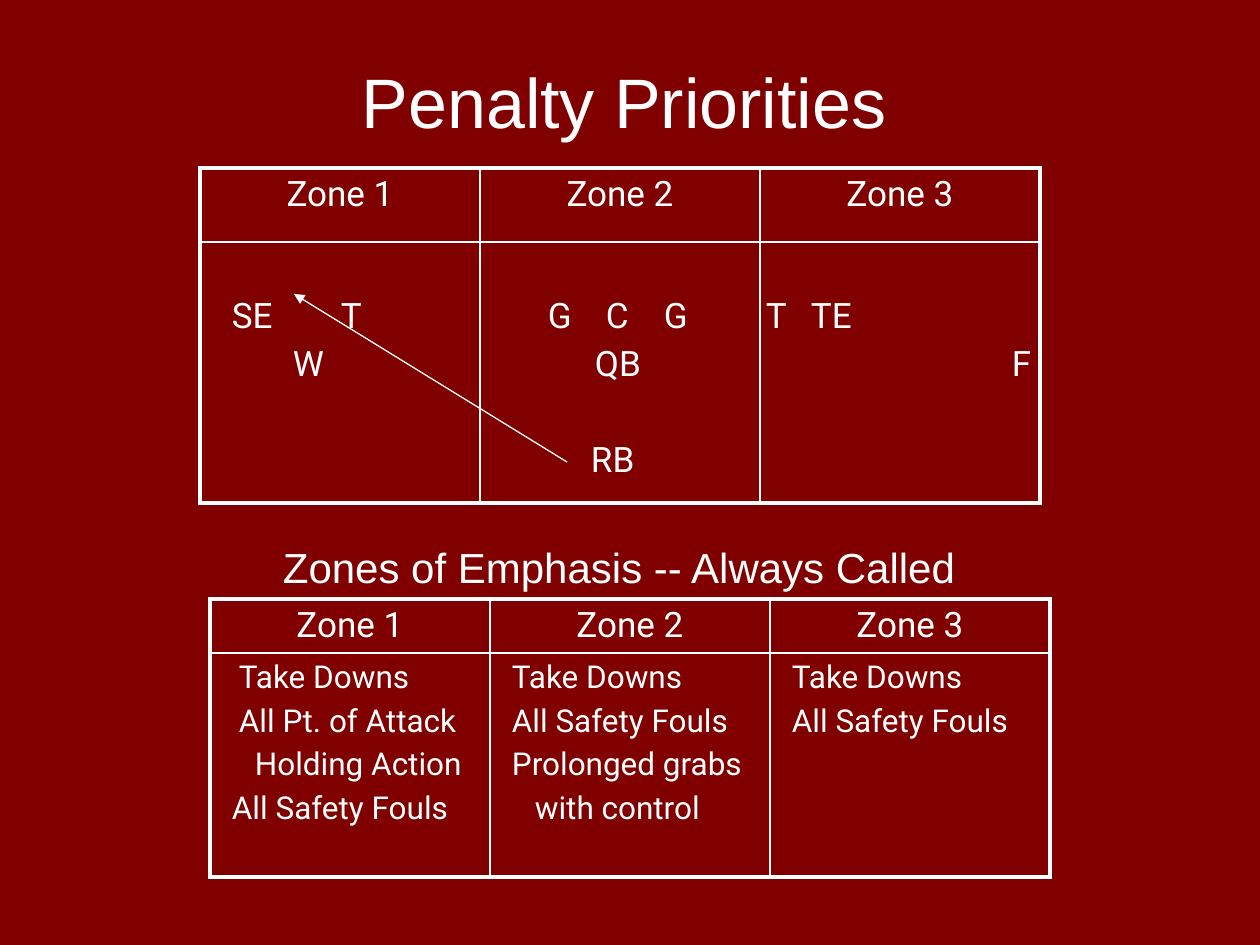
from pptx import Presentation
from pptx.dml.color import RGBColor
from pptx.enum.shapes import MSO_CONNECTOR
from pptx.enum.text import PP_ALIGN
from pptx.oxml.ns import qn
from pptx.util import Emu, Pt
from lxml import etree

CENTER, LEFT = PP_ALIGN.CENTER, PP_ALIGN.LEFT
STRAIGHT = MSO_CONNECTOR.STRAIGHT
MAROON = RGBColor(0x80, 0x00, 0x00)
WHITE = RGBColor(0xFF, 0xFF, 0xFF)
PX_PER_INCH = 126
INSET = 6
COLUMN_WIDTH = 280
LINE_GAP = 4
OUTER, INNER = 2.25, 1

# text, (left, top, width, height), size
HEADINGS = [
    ("Penalty Priorities", (73, 53, 1102, 89), 40),
    ("Zones of Emphasis -- Always Called", (73, 536, 1092, 60), 24),
]
ZONES = ["Zone 1", "Zone 2", "Zone 3"]
# Each line: space before in points, then (offset in px, text) items
FORMATION = [
    [(LINE_GAP, [(26, "SE"), (135, "T")]), (LINE_GAP, [(87, "W")])],
    [(LINE_GAP, [(62, "G"), (120, "C"), (178, "G")]),
     (LINE_GAP, [(109, "QB")]),
     (31.4, [(105, "RB")])],
    [(LINE_GAP, [(0, "T"), (45, "TE")]), (LINE_GAP, [(246, "F")])],
]
FOULS = [
    [(LINE_GAP, [(23, "Take Downs")]),
     (LINE_GAP, [(23, "All Pt. of Attack")]),
     (LINE_GAP, [(39, "Holding Action")]),
     (LINE_GAP, [(16, "All Safety Fouls")])],
    [(LINE_GAP, [(16, "Take Downs")]),
     (LINE_GAP, [(16, "All Safety Fouls")]),
     (LINE_GAP, [(16, "Prolonged grabs")]),
     (LINE_GAP, [(39, "with control")])],
    [(LINE_GAP, [(16, "Take Downs")]),
     (LINE_GAP, [(16, "All Safety Fouls")])],
]
# left, top, row heights, body, body size, body top margin
TABLES = [
    (200, 168, (74, 261), FORMATION, 20, 54),
    (210, 599, (53, 224), FOULS, 18, INSET),
]
RUN_START, RUN_END = (567, 462), (294, 294)


def px(length):
    return Emu(round(length * 914400 / PX_PER_INCH))


def set_font(para, name, size):
    para.font.name = name
    para.font.size = Pt(size)
    para.font.color.rgb = WHITE


def set_margins(target, top=INSET):
    target.margin_left = target.margin_right = target.margin_bottom = px(INSET)
    target.margin_top = px(top)


def add_heading(page, text, frame, size):
    box = page.shapes.add_textbox(*map(px, frame))
    box.text_frame.word_wrap = True
    set_margins(box.text_frame)
    para = box.text_frame.paragraphs[0]
    para.text = text
    para.alignment = CENTER
    set_font(para, "Arial", size)


def place_items(para, items):
    """Indent a single item; set several items at tab stops."""
    props = para._p.get_or_add_pPr()
    if len(items) == 1:
        offset, para.text = items[0]
        props.set("marL", str(px(offset)))
        props.set("indent", "0")
        return
    para.text = "".join(("\t" if offset else "") + text for offset, text in items)
    stops = etree.SubElement(props, qn("a:tabLst"))
    for offset, _ in items:
        if offset:
            etree.SubElement(stops, qn("a:tab"), pos=str(px(offset)), algn="l")


def set_borders(cell, row, column):
    widths = {
        "a:lnL": OUTER if column == 0 else INNER,
        "a:lnR": OUTER if column == len(ZONES) - 1 else INNER,
        "a:lnT": OUTER if row == 0 else INNER,
        "a:lnB": OUTER if row == 1 else INNER,
    }
    props = cell._tc.get_or_add_tcPr()
    for index, (tag, width) in enumerate(widths.items()):
        line = etree.Element(qn(tag), w=str(Pt(width)))
        fill = etree.SubElement(line, qn("a:solidFill"))
        etree.SubElement(fill, qn("a:srgbClr"), val=str(WHITE))
        props.insert(index, line)


def fill_body(cell, lines, size):
    frame = cell.text_frame
    for index, (space, items) in enumerate(lines):
        para = frame.add_paragraph() if index else frame.paragraphs[0]
        para.alignment = LEFT
        if index:
            para.space_before = Pt(space)
        place_items(para, items)
        set_font(para, "Roboto", size)


def add_zone_table(page, left, top, heights, body, size, body_top):
    frame = (left, top, COLUMN_WIDTH * len(ZONES), sum(heights))
    table = page.shapes.add_table(2, len(ZONES), *map(px, frame)).table
    table.first_row = table.horz_banding = False
    for row, height in zip(table.rows, heights):
        row.height = px(height)
    for column, zone in enumerate(ZONES):
        table.columns[column].width = px(COLUMN_WIDTH)
        header, content = table.cell(0, column), table.cell(1, column)
        for row, cell in enumerate((header, content)):
            cell.fill.background()
            set_borders(cell, row, column)
        set_margins(header)
        set_margins(content, body_top)
        para = header.text_frame.paragraphs[0]
        para.text = zone
        para.alignment = CENTER
        set_font(para, "Roboto", 20)
        fill_body(content, body[column], size)


def add_run_arrow(page):
    arrow = page.shapes.add_connector(STRAIGHT, *map(px, RUN_START + RUN_END))
    arrow.line.color.rgb = WHITE
    arrow.line.width = Pt(0.75)
    etree.SubElement(arrow.line._get_or_add_ln(), qn("a:tailEnd"), type="triangle")
    etree.SubElement(arrow._element.spPr, qn("a:effectLst"))


def main():
    deck = Presentation()
    deck.slide_width, deck.slide_height = px(1260), px(945)
    page = deck.slides.add_slide(deck.slide_layouts[6])
    page.background.fill.solid()
    page.background.fill.fore_color.rgb = MAROON
    for heading in HEADINGS:
        add_heading(page, *heading)
    for table in TABLES:
        add_zone_table(page, *table)
    add_run_arrow(page)
    deck.save("out.pptx")


if __name__ == "__main__":
    main()
